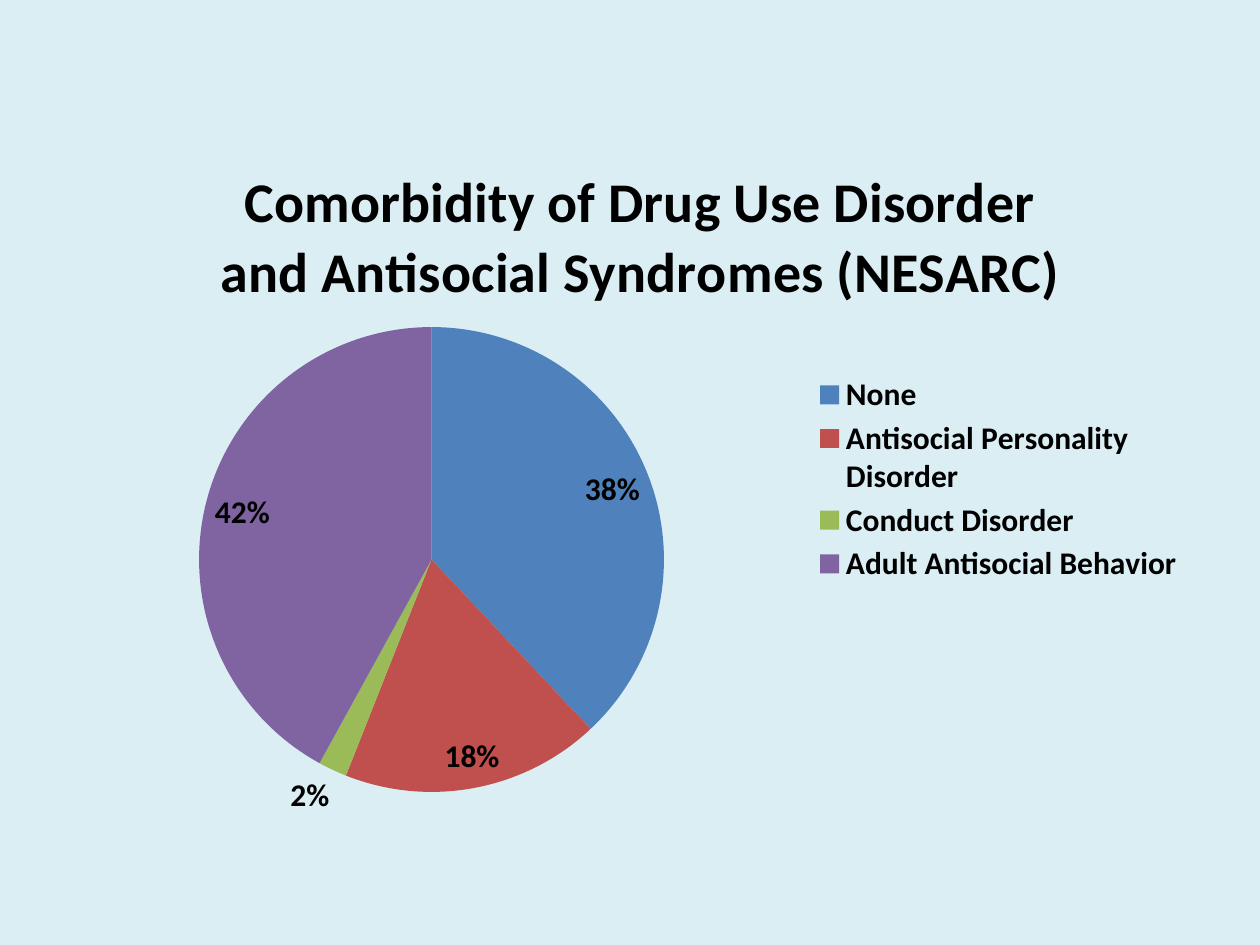
from lxml import etree
from pptx import Presentation
from pptx.chart.data import CategoryChartData
from pptx.dml.color import RGBColor
from pptx.enum.chart import XL_CHART_TYPE, XL_LABEL_POSITION, XL_LEGEND_POSITION
from pptx.oxml.ns import qn
from pptx.util import Pt

PIE = XL_CHART_TYPE.PIE
BEST_FIT = XL_LABEL_POSITION.BEST_FIT
LEGEND_RIGHT = XL_LEGEND_POSITION.RIGHT

BACKGROUND = RGBColor(0xDB, 0xEE, 0xF4)
BLACK = RGBColor(0x00, 0x00, 0x00)
BLUE = RGBColor(0x4F, 0x81, 0xBD)
RED = RGBColor(0xC0, 0x50, 0x4D)
GREEN = RGBColor(0x9B, 0xBB, 0x59)
PURPLE = RGBColor(0x80, 0x64, 0xA2)

TITLE = "Comorbidity of Drug Use Disorder and Antisocial Syndromes (NESARC)"
SLICES = [
    ("None", 38, BLUE),
    ("Antisocial Personality Disorder", 18, RED),
    ("Conduct Disorder", 2, GREEN),
    ("Adult Antisocial Behavior", 42, PURPLE),
]
BODY_FONT = {"name": "Calibri", "size": Pt(18), "bold": True}
TITLE_FONT = {**BODY_FONT, "size": Pt(32)}
LABELS = {
    "show_percentage": True,
    "show_value": False,
    "number_format": "0%",
    "number_format_is_linked": False,
    "position": BEST_FIT,
}


def set_values(target, values):
    for name, value in values.items():
        setattr(target, name, value)


def style_font(font, values):
    set_values(font, values)
    font.color.rgb = BLACK


def place_part(part, successor, values):
    for old in part.findall(qn("c:layout")):
        part.remove(old)
    layout = etree.Element(qn("c:layout"))
    manual = etree.SubElement(layout, qn("c:manualLayout"))
    for name, value in values.items():
        etree.SubElement(manual, qn(f"c:{name}")).set("val", str(value))
    part.find(qn(successor)).addprevious(layout)


def add_pie(page, left, top, width, height):
    names, values, colors = zip(*SLICES)
    data = CategoryChartData()
    data.categories = names
    data.add_series("Series 1", values)
    chart = page.shapes.add_chart(PIE, left, top, width, height, data).chart
    style_font(chart.font, BODY_FONT)

    chart.has_title = True
    title = chart.chart_title
    para = title.text_frame.paragraphs[0]
    span = para.add_run()
    span.text = TITLE
    style_font(span.font, TITLE_FONT)

    chart.has_legend = True
    set_values(chart.legend, {"position": LEGEND_RIGHT, "include_in_layout": False})

    plot = chart.plots[0]
    plot.vary_by_categories = True
    for index, color in enumerate(colors):
        fill = plot.series[0].points[index].format.fill
        fill.solid()
        fill.fore_color.rgb = color
    plot.has_data_labels = True
    set_values(plot.data_labels, LABELS)
    style_font(plot.data_labels.font, BODY_FONT)

    edges = {"xMode": "edge", "yMode": "edge"}
    plot_area = chart.element.find(".//" + qn("c:plotArea"))
    place_part(title._element, "c:overlay", {**edges, "x": 0.13, "y": 0.05})
    place_part(plot_area, "c:pieChart", {
        "layoutTarget": "inner", **edges, "x": 0.12, "y": 0.29, "w": 0.41, "h": 0.64})
    place_part(chart.legend._element, "c:overlay", {
        **edges, "x": 0.66, "y": 0.35, "w": 0.33, "h": 0.3})


def main():
    deck = Presentation()
    deck.slide_width, deck.slide_height = Pt(720), Pt(540)
    page = deck.slides.add_slide(deck.slide_layouts[6])
    page.background.fill.solid()
    page.background.fill.fore_color.rgb = BACKGROUND
    add_pie(page, Pt(36), Pt(66), Pt(648), Pt(416))
    deck.save("out.pptx")


if __name__ == "__main__":
    main()
